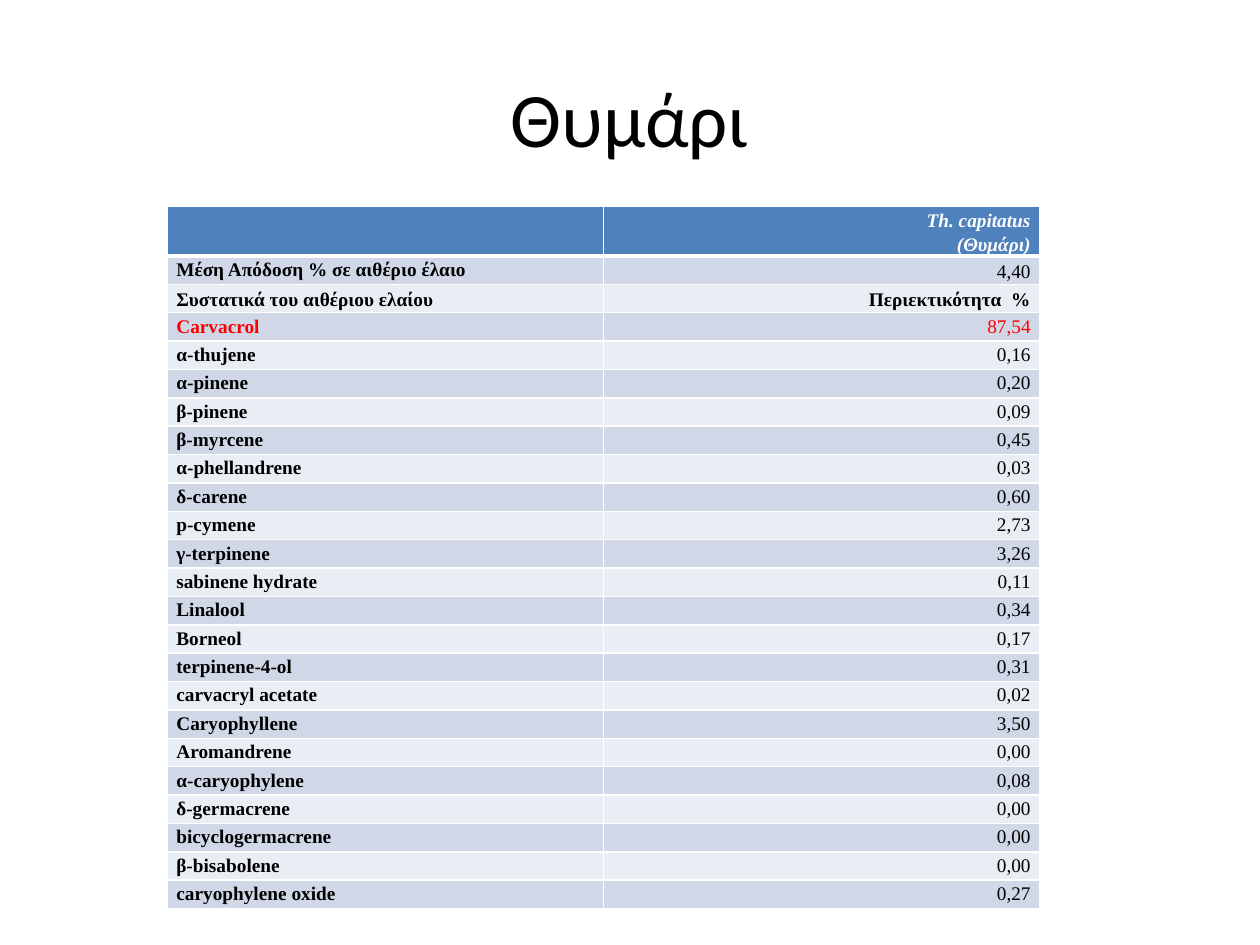
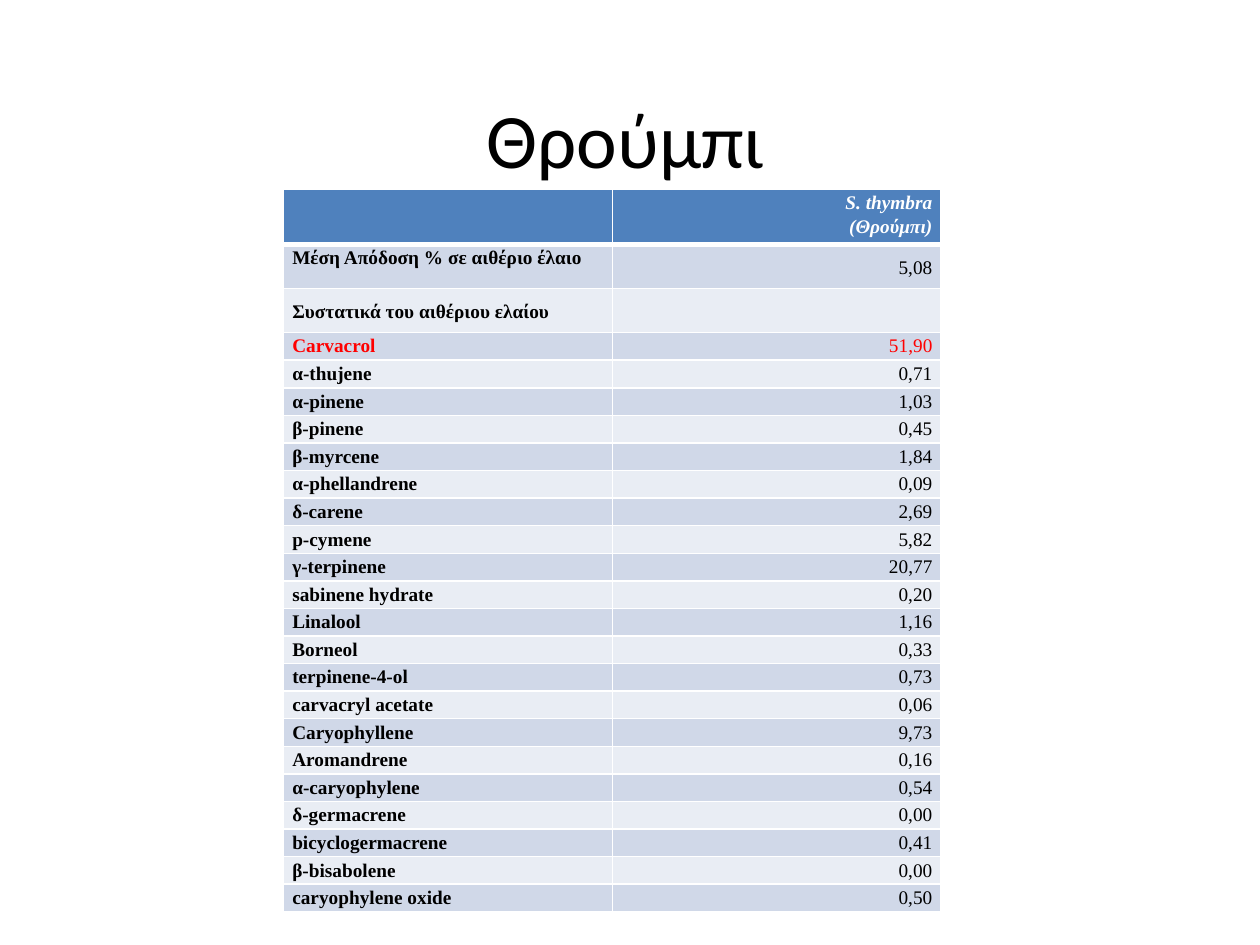
from dataclasses import dataclass

from lxml import etree
from pptx import Presentation
from pptx.dml.color import RGBColor
from pptx.enum.text import MSO_ANCHOR, PP_ALIGN
from pptx.oxml.ns import qn
from pptx.util import Inches, Pt

LEFT, CENTER, RIGHT = PP_ALIGN.LEFT, PP_ALIGN.CENTER, PP_ALIGN.RIGHT
TOP, MIDDLE = MSO_ANCHOR.TOP, MSO_ANCHOR.MIDDLE

# The slide is a grid of 100 columns by 75 rows of square units
COLUMNS, ROWS = 100, 75
UNIT = Inches(0.1)
TITLE_ONLY = 5


@dataclass(frozen=True)
class Theme:
    title_font: str = "Calibri"
    table_font: str = "Times New Roman"
    title_size: int = 44
    table_size: int = 11
    line_spacing: float = 1.15
    side_margin: float = 0.7
    text: str = "000000"
    highlight: str = "FF0000"
    header_text: str = "FFFFFF"
    header_fill: str = "4F81BD"
    bands: tuple = ("D0D8E8", "E9EDF4")
    border: str = "FFFFFF"
    thin: int = 1
    thick: int = 3


THEME = Theme()

YIELD_LABEL = "Μέση Απόδοση % σε αιθέριο έλαιο"
COMPONENTS_LABEL = "Συστατικά του αιθέριου ελαίου"
MAIN_COMPONENT = "Carvacrol"
COMPONENTS = [
    MAIN_COMPONENT, "α-thujene", "α-pinene", "β-pinene", "β-myrcene",
    "α-phellandrene", "δ-carene", "p-cymene", "γ-terpinene",
    "sabinene hydrate", "Linalool", "Borneol", "terpinene-4-ol",
    "carvacryl acetate", "Caryophyllene", "Aromandrene", "α-caryophylene",
    "δ-germacrene", "bicyclogermacrene", "β-bisabolene", "caryophylene oxide",
]


@dataclass(frozen=True)
class Herb:
    name: str
    species: str
    oil_yield: str
    content_label: str
    contents: str
    title_box: tuple    # left, top, width, height in grid units
    table_box: tuple
    top_rows: tuple     # heights of the first rows; the others share the rest


HERBS = [
    Herb("Θυμάρι", "Th. capitatus", "4,40", "Περιεκτικότητα  %",
         "87,54 0,16 0,20 0,09 0,45 0,03 0,60 2,73 3,26 0,11 0,34 0,17 "
         "0,31 0,02 3,50 0,00 0,08 0,00 0,00 0,00 0,27",
         (5, 3, 90, 12.5), (13.3, 16.4, 69.2, 55.7), (3.9,)),
    Herb("Θρούμπι", "S. thymbra", "5,08", "",
         "51,90 0,71 1,03 0,45 1,84 0,09 2,69 5,82 20,77 0,20 1,16 0,33 "
         "0,73 0,06 9,73 0,16 0,54 0,00 0,41 0,00 0,50",
         (4.7, 4.7, 90, 12.5), (22.5, 15, 52.2, 57.4), (4.4, 3.5, 3.5)),
]


def units(value):
    return round(value * UNIT)


def format_paragraph(paragraph, font_name, size, color, alignment, bold=False, italic=False):
    paragraph.alignment = alignment
    for run in paragraph.runs:
        font = run.font
        font.name, font.size = font_name, Pt(size)
        font.bold, font.italic = bold, italic
        font.color.rgb = RGBColor.from_string(color)


def set_title(slide, herb):
    title = slide.shapes.title
    title.left, title.top, title.width, title.height = map(units, herb.title_box)
    title.text_frame.text = herb.name
    title.text_frame.vertical_anchor = MIDDLE
    format_paragraph(title.text_frame.paragraphs[0], THEME.title_font,
                     THEME.title_size, THEME.text, CENTER)


def set_borders(cell, row):
    widths = {
        "a:lnL": THEME.thin,
        "a:lnR": THEME.thin,
        "a:lnT": THEME.thick if row == 1 else THEME.thin,
        "a:lnB": THEME.thick if row == 0 else THEME.thin,
    }
    properties = cell._tc.get_or_add_tcPr()
    for tag, width in widths.items():
        line = etree.SubElement(properties, qn(tag), w=str(Pt(width)))
        fill = etree.SubElement(line, qn("a:solidFill"))
        etree.SubElement(fill, qn("a:srgbClr"), val=THEME.border)


def fill_cell(cell, text, row, fill, anchor, color, alignment, bold, italic):
    cell.margin_left = cell.margin_right = units(THEME.side_margin)
    cell.margin_top = cell.margin_bottom = 0
    cell.vertical_anchor = anchor
    set_borders(cell, row)
    cell.fill.solid()
    cell.fill.fore_color.rgb = RGBColor.from_string(fill)
    cell.text_frame.text = text
    for paragraph in cell.text_frame.paragraphs:
        paragraph.line_spacing = THEME.line_spacing
        format_paragraph(paragraph, THEME.table_font, THEME.table_size,
                         color, alignment, bold, italic)


def table_rows(herb):
    return [
        ("", f"{herb.species}\n({herb.name})"),
        (YIELD_LABEL, herb.oil_yield),
        (COMPONENTS_LABEL, herb.content_label),
        *zip(COMPONENTS, herb.contents.split()),
    ]


def add_oil_table(slide, herb):
    rows = table_rows(herb)
    table = slide.shapes.add_table(len(rows), 2, *map(units, herb.table_box)).table

    # Row heights
    remaining = herb.table_box[3] - sum(herb.top_rows)
    body_height = remaining / (len(rows) - len(herb.top_rows))
    for index, row in enumerate(table.rows):
        height = herb.top_rows[index] if index < len(herb.top_rows) else body_height
        row.height = units(height)

    # Labels on the left, values on the right
    for index, (label, value) in enumerate(rows):
        is_header = index == 0
        fill = THEME.header_fill if is_header else THEME.bands[(index - 1) % 2]
        color = THEME.text
        if is_header:
            color = THEME.header_text
        elif label == MAIN_COMPONENT:
            color = THEME.highlight
        label_anchor = MIDDLE if index == 2 else TOP
        value_anchor = MIDDLE if index in (1, 2) else TOP
        fill_cell(table.cell(index, 0), label, index, fill, label_anchor,
                  color, LEFT, True, is_header)
        fill_cell(table.cell(index, 1), value, index, fill, value_anchor,
                  color, RIGHT, index in (0, 2), is_header)


def main():
    presentation = Presentation()
    presentation.slide_width = units(COLUMNS)
    presentation.slide_height = units(ROWS)
    for herb in HERBS:
        slide = presentation.slides.add_slide(presentation.slide_layouts[TITLE_ONLY])
        set_title(slide, herb)
        add_oil_table(slide, herb)
    presentation.save("out.pptx")


if __name__ == "__main__":
    main()
